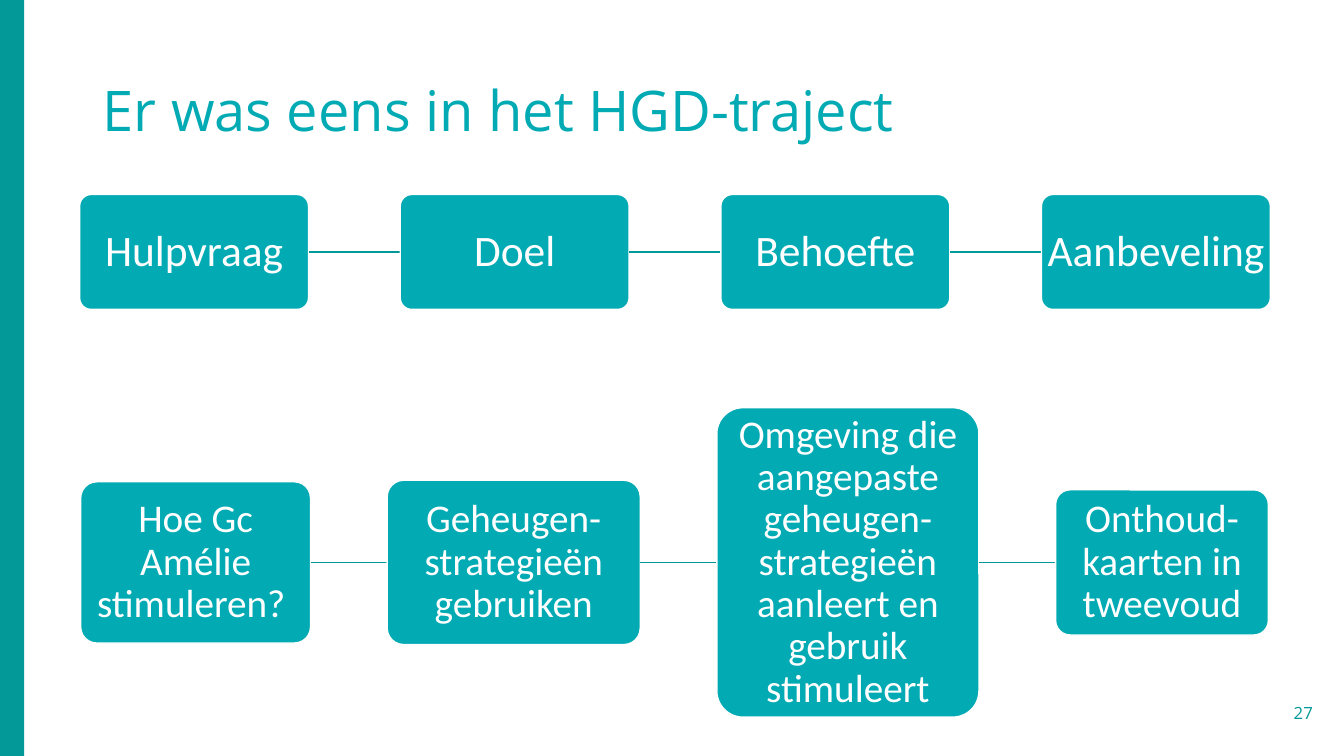
import pptx
import pptx.dml.color
import pptx.enum.shapes
import pptx.enum.text
import pptx.oxml.ns
import pptx.util
from lxml import etree

Inches = pptx.util.Inches
Pt = pptx.util.Pt
RGBColor = pptx.dml.color.RGBColor
Align = pptx.enum.text.PP_ALIGN
Shape = pptx.enum.shapes.MSO_SHAPE

TURQUOISE = RGBColor(0x02, 0xAA, 0xB4)
TEAL = RGBColor(0x04, 0x99, 0x99)
WHITE = RGBColor(0xFF, 0xFF, 0xFF)
WIDTH, HEIGHT = 13.33, 7.5

TITLE = {"size": Pt(40), "name": "Open Sans", "color": TURQUOISE}
NUMBER = {"size": Pt(12), "name": "Open Sans", "color": TEAL}
STEP = {"size": Pt(31), "name": "Calibri", "color": WHITE}
EXAMPLE = {"size": Pt(28), "name": "Calibri", "color": WHITE}

# Each step: text, width, height
STEPS = [(name, 2.27, 1.14)
         for name in ("Hulpvraag", "Doel", "Behoefte", "Aanbeveling ")]
EXAMPLES = [
    ("Hoe Gc Amélie stimuleren? ", 2.28, 1.6),
    ("Geheugen-strategieën gebruiken", 2.51, 1.63),
    ("Omgeving die aangepaste geheugen-strategieën aanleert en gebruik stimuleert",
     2.6, 3.07),
    ("Onthoud-kaarten in tweevoud", 2.11, 1.44),
]


def write(shape, text, style, align, spacing=0.9, insets=(0.1, 0.05)):
    frame = shape.text_frame
    frame.word_wrap = True
    frame.vertical_anchor = pptx.enum.text.MSO_ANCHOR.MIDDLE
    frame.margin_left = frame.margin_right = Inches(insets[0])
    frame.margin_top = frame.margin_bottom = Inches(insets[1])
    para = frame.paragraphs[0]
    para.alignment = align
    para.line_spacing = spacing
    span = para.add_run()
    span.text = text
    for key, value in style.items():
        if key == "color":
            span.font.color.rgb = value
        else:
            setattr(span.font, key, value)


def add_filled(page, kind, box, color):
    shape = page.shapes.add_shape(kind, *map(Inches, box))
    shape.shadow.inherit = False
    shape.fill.solid()
    shape.fill.fore_color.rgb = color
    shape.line.fill.background()
    return shape


def add_text(page, box, text, style, align, spacing):
    write(page.shapes.add_textbox(*map(Inches, box)), text, style, align, spacing)


def add_link(page, start, end, middle):
    link = page.shapes.add_connector(
        pptx.enum.shapes.MSO_CONNECTOR.STRAIGHT,
        *map(Inches, (start, middle, end, middle)))
    link.line.color.rgb = TEAL
    link.line.width = Pt(1)
    etree.SubElement(link._element.spPr, pptx.oxml.ns.qn("a:effectLst"))


def add_chain(page, left, middle, gap, steps, style):
    """Boxes centred on one horizontal line, joined across equal gaps."""
    for index, (text, width, height) in enumerate(steps):
        if index:
            add_link(page, left - gap, left, middle)
        box = (left, middle - height / 2, width, height)
        step = add_filled(page, Shape.ROUNDED_RECTANGLE, box, TURQUOISE)
        step.adjustments[0] = 0.1
        step.line.color.rgb = WHITE
        step.line.width = Pt(1)
        write(step, text, style, Align.CENTER, insets=(0.02, 0.02))
        left += width + gap


def build_page(deck):
    page = deck.slides.add_slide(deck.slide_layouts[6])
    add_filled(page, Shape.RECTANGLE, (0, 0, 0.24, HEIGHT), TEAL)
    add_text(page, (12.26, 6.87, 0.86, 0.4), "27", NUMBER, Align.RIGHT, 1.0)
    add_chain(page, 0.79, 2.5, 0.91, STEPS, STEP)
    add_chain(page, 0.8, 5.58, 0.76, EXAMPLES, EXAMPLE)
    add_text(page, (0.92, 0.4, 11.5, 1.45), "Er was eens in het HGD-traject",
             TITLE, Align.LEFT, 0.9)


def main():
    deck = pptx.Presentation()
    deck.slide_width = Inches(WIDTH)
    deck.slide_height = Inches(HEIGHT)
    build_page(deck)
    deck.save("out.pptx")


if __name__ == "__main__":
    main()
